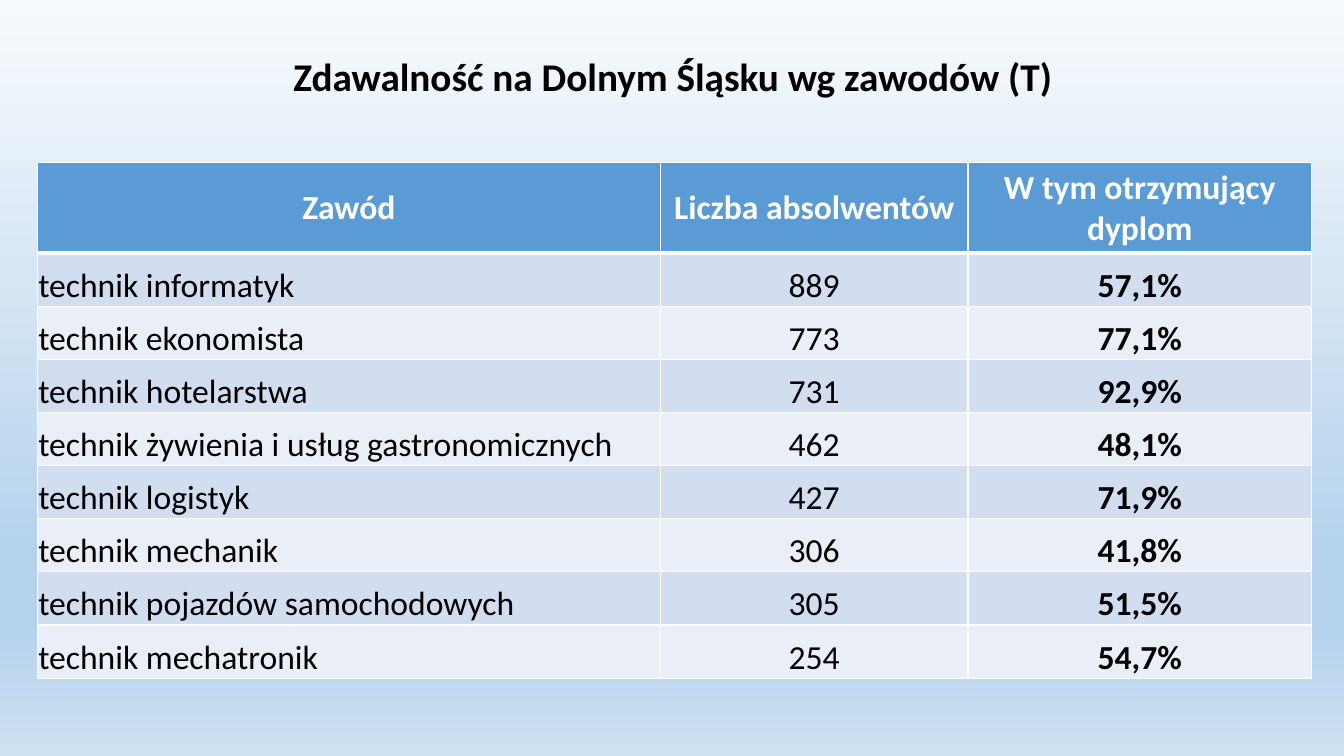
from lxml.etree import SubElement
from pptx import Presentation
from pptx.dml.color import RGBColor
from pptx.enum.text import MSO_ANCHOR, PP_ALIGN
from pptx.oxml import parse_xml
from pptx.oxml.ns import nsdecls, qn
from pptx.util import Inches, Pt

TITLE = "Zdawalność na Dolnym Śląsku wg zawodów (T)"
HEADERS = ["Zawód", "Liczba absolwentów", "W tym otrzymujący dyplom"]
RESULTS = [
    ("technik informatyk", "889", "57,1%"),
    ("technik ekonomista", "773", "77,1%"),
    ("technik hotelarstwa", "731", "92,9%"),
    ("technik żywienia i usług gastronomicznych", "462", "48,1%"),
    ("technik logistyk", "427", "71,9%"),
    ("technik mechanik", "306", "41,8%"),
    ("technik pojazdów samochodowych", "305", "51,5%"),
    ("technik mechatronik", "254", "54,7%"),
]
COLUMN_WIDTHS = [6.18, 3.05, 3.41]
COLUMN_FORMATS = [{"align": PP_ALIGN.LEFT}, {}, {"bold": True}]
HEADER_HEIGHT = 0.9
TABLE_HEIGHT = 5.12
HEADER_FILL = "5B9BD5"
BAND_FILLS = ["D2DEEF", "EAEFF7"]
BACKGROUND_STOPS = [(0, "F7FAFD"), (74, "B5D2EC"), (83, "B5D2EC"), (100, "CEE1F2")]


def color(value):
    return RGBColor.from_string(value)


def write_text(frame, text, size=24, text_color="000000", bold=False, align=PP_ALIGN.CENTER, spacing=1.0):
    frame.word_wrap = True
    paragraph = frame.paragraphs[0]
    paragraph.alignment = align
    paragraph.line_spacing = spacing
    run = paragraph.add_run()
    run.text = text
    run.font.name = "Calibri"
    run.font.size = Pt(size)
    run.font.bold = bold
    run.font.color.rgb = color(text_color)


def paint_background(slide):
    fill = slide.background.fill
    fill.gradient()
    fill.gradient_angle = 270
    stops = slide.element.find(".//" + qn("a:gsLst"))
    for stop in list(stops):
        stops.remove(stop)
    for position, value in BACKGROUND_STOPS:
        stop = SubElement(stops, qn("a:gs"), pos=str(position * 1000))
        SubElement(stop, qn("a:srgbClr"), val=value)


def add_title(slide):
    title = slide.shapes.add_textbox(Inches(0.92), Inches(0.4), Inches(11.5), Inches(0.77))
    title.text_frame.vertical_anchor = MSO_ANCHOR.MIDDLE
    write_text(title.text_frame, TITLE, size=28, bold=True, spacing=0.9)


def set_borders(cell, top=1, bottom=1):
    properties = cell._tc.get_or_add_tcPr()
    for index, (side, width) in enumerate([("L", 1), ("R", 1), ("T", top), ("B", bottom)]):
        border = parse_xml(
            f'<a:ln{side} {nsdecls("a")} w="{Pt(width)}"><a:solidFill>'
            f'<a:srgbClr val="FFFFFF"/></a:solidFill></a:ln{side}>'
        )
        properties.insert(index, border)


def fill_cell(cell, text, background, anchor, **text_format):
    cell.fill.solid()
    cell.fill.fore_color.rgb = color(background)
    cell.vertical_anchor = anchor
    write_text(cell.text_frame, text, **text_format)


def fill_header(table):
    for column, text in enumerate(HEADERS):
        cell = table.cell(0, column)
        fill_cell(cell, text, HEADER_FILL, MSO_ANCHOR.MIDDLE, text_color="FFFFFF", bold=True)
        set_borders(cell, bottom=3)


def fill_results(table):
    for row, result in enumerate(RESULTS, start=1):
        for column, text in enumerate(result):
            cell = table.cell(row, column)
            cell.margin_left = cell.margin_right = cell.margin_top = Inches(0.01)
            cell.margin_bottom = 0
            background = BAND_FILLS[(row - 1) % 2]
            fill_cell(cell, text, background, MSO_ANCHOR.BOTTOM, **COLUMN_FORMATS[column])
            set_borders(cell, top=3 if row == 1 else 1)


def add_results_table(slide):
    table = slide.shapes.add_table(
        len(RESULTS) + 1, len(HEADERS),
        Inches(0.37), Inches(1.61), Inches(sum(COLUMN_WIDTHS)), Inches(TABLE_HEIGHT),
    ).table
    for column, width in zip(table.columns, COLUMN_WIDTHS):
        column.width = Inches(width)
    row_height = (TABLE_HEIGHT - HEADER_HEIGHT) / len(RESULTS)
    for index, row in enumerate(table.rows):
        row.height = Inches(row_height if index else HEADER_HEIGHT)
    fill_header(table)
    fill_results(table)


def main():
    presentation = Presentation()
    presentation.slide_width = Inches(13.33)
    presentation.slide_height = Inches(7.5)
    slide = presentation.slides.add_slide(presentation.slide_layouts[6])
    paint_background(slide)
    add_title(slide)
    add_results_table(slide)
    presentation.save("out.pptx")


if __name__ == "__main__":
    main()
